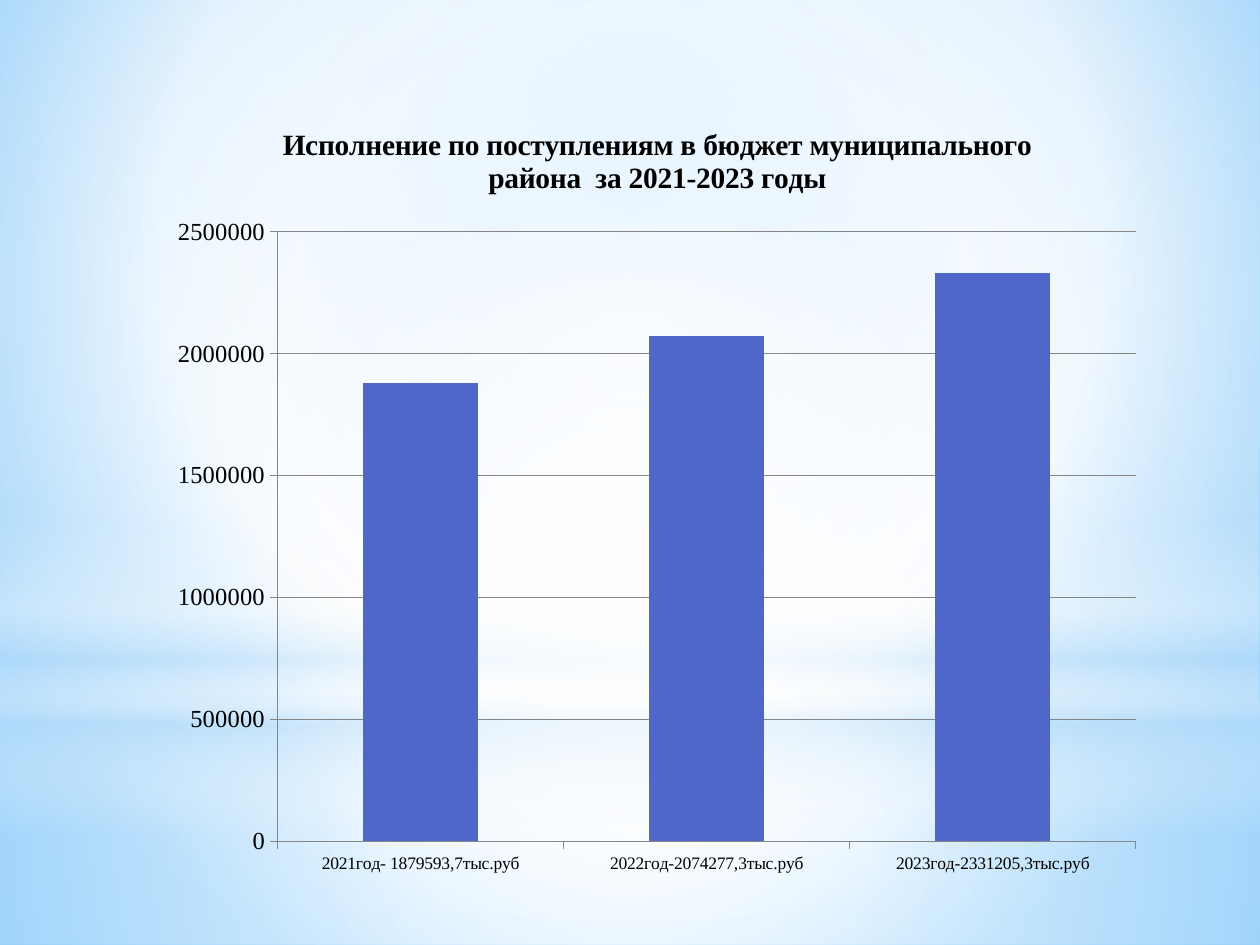
from lxml import etree
from pptx import Presentation
from pptx.chart.data import CategoryChartData
from pptx.dml.color import RGBColor
from pptx.enum.chart import XL_CHART_TYPE, XL_TICK_MARK
from pptx.enum.shapes import MSO_SHAPE
from pptx.oxml.ns import qn
from pptx.util import Cm, Pt

FONT = "Times New Roman"
WHITE, PALE, GRID, BAR = "FFFFFF", "B4DCFA", "868686", "4E67C8"
CENTRE = (50, 50, 50, 50)
TITLE = "Исполнение по поступлениям в бюджет муниципального района  за 2021-2023 годы"
INCOME = {
    "2021год- 1879593,7тыс.руб": 1880000,
    "2022год-2074277,3тыс.руб": 2070000,
    "2023год-2331205,3тыс.руб": 2330000,
}

# Kind, box in cm, stops (position, colour, opacity), focus (None: vertical)
GLOWS = [
    (MSO_SHAPE.RECTANGLE, (0, 14.17, 25.4, 4.88),
     [(0, WHITE, 91), (37, WHITE, 76), (100, PALE, 79)], CENTRE),
    (MSO_SHAPE.RECTANGLE, (0, 0, 25.4, 14.17),
     [(0, WHITE, 89), (48, WHITE, 62), (100, PALE, 79)], CENTRE),
    (MSO_SHAPE.RECTANGLE, (0, 10.46, 25.4, 6.35),
     [(0, WHITE, 0), (29, WHITE, 30), (45, PALE, 40), (55, WHITE, 26),
      (65, PALE, 60), (100, WHITE, 0)], None),
    (MSO_SHAPE.OVAL, (0, 4.45, 25.4, 14.17),
     [(0, WHITE, 100), (56, WHITE, 0)], CENTRE),
]


def rgb(value):
    return RGBColor.from_string(value)


def set_font(font, **values):
    formats = {"name": FONT, "bold": False, **values}
    for name, value in formats.items():
        setattr(font, name, value)
    font.color.rgb = rgb("000000")


def set_gradient(fill, element, stops, focus):
    """Fill with stops, spreading from the focus rectangle or straight down."""
    fill.gradient()
    grad = next(element.iter(qn("a:gradFill")))
    for child in list(grad):
        grad.remove(child)
    stop_list = etree.SubElement(grad, qn("a:gsLst"))
    for pos, color, opacity in stops:
        gs = etree.SubElement(stop_list, qn("a:gs"), pos=str(pos * 1000))
        clr = etree.SubElement(gs, qn("a:srgbClr"), val=color)
        if opacity < 100:
            etree.SubElement(clr, qn("a:alpha"), val=str(opacity * 1000))
    if focus is None:
        etree.SubElement(grad, qn("a:lin"), ang="5400000", scaled="0")
        return
    path = etree.SubElement(grad, qn("a:path"), path="circle")
    sides = {side: str(v * 1000) for side, v in zip("ltrb", focus)}
    etree.SubElement(path, qn("a:fillToRect"), **sides)


def add_glow(s, kind, box, stops, focus):
    sp = s.shapes.add_shape(kind, *map(Cm, box))
    sp.shadow.inherit = False
    sp.line.fill.background()
    set_gradient(sp.fill, sp.element, stops, focus)


def place_part(part, index, **values):
    """Give a chart part a manual layout, in fractions of the chart."""
    for old in part.findall(qn("c:layout")):
        part.remove(old)
    layout = etree.Element(qn("c:layout"))
    part.insert(index, layout)
    manual = etree.SubElement(layout, qn("c:manualLayout"))
    for name, value in values.items():
        etree.SubElement(manual, qn(f"c:{name}"), val=str(value))


def format_axis(axis, size):
    axis.major_tick_mark = XL_TICK_MARK.OUTSIDE
    axis.minor_tick_mark = XL_TICK_MARK.NONE
    set_font(axis.tick_labels.font, size=Pt(size))
    axis.format.line.color.rgb = rgb(GRID)
    axis.format.line.width = Pt(0.75)


def add_income_chart(s):
    data = CategoryChartData(number_format="General")
    data.categories = list(INCOME)
    data.add_series("Series 1", list(INCOME.values()))
    chart = s.shapes.add_chart(XL_CHART_TYPE.COLUMN_CLUSTERED, Cm(3.18), Cm(2.03),
                               Cm(20.12), Cm(15.9), data).chart
    set_font(chart.font, size=Pt(14))
    chart.has_legend = False
    chart.has_title = True
    chart.chart_title.include_in_layout = False
    p = chart.chart_title.text_frame.paragraphs[0]
    r = p.add_run()
    r.text = TITLE
    set_font(r.font, size=Pt(16.8), bold=True)

    format_axis(chart.category_axis, 10)
    axis = chart.value_axis
    format_axis(axis, 14)
    axis.minimum_scale, axis.maximum_scale, axis.major_unit = 0, 2500000, 500000
    axis.has_major_gridlines = True
    axis.major_gridlines.format.line.color.rgb = rgb(GRID)
    axis.major_gridlines.format.line.width = Pt(0.75)

    plot = chart.plots[0]
    plot.gap_width = 150
    plot.vary_by_categories = False
    fill = plot.series[0].format.fill
    fill.solid()
    fill.fore_color.rgb = rgb(BAR)

    edges = {"xMode": "edge", "yMode": "edge"}
    place_part(next(chart.element.iter(qn("c:title"))), 1, **edges, x=0.12, y=0.025)
    place_part(next(chart.element.iter(qn("c:plotArea"))), 0, layoutTarget="inner",
               **edges, x=0.12, y=0.166, w=0.86, h=0.773)


def main():
    prs = Presentation()
    prs.slide_width, prs.slide_height = Cm(25.4), Cm(19.05)
    s = prs.slides.add_slide(prs.slide_layouts[6])
    set_gradient(s.background.fill, s.element,
                 [(0, "9ED5FF", 100), (60, WHITE, 100), (100, "5BB9FF", 100)],
                 (20, 10, 20, 60))
    for glow in GLOWS:
        add_glow(s, *glow)
    add_income_chart(s)
    prs.save("out.pptx")


if __name__ == "__main__":
    main()
